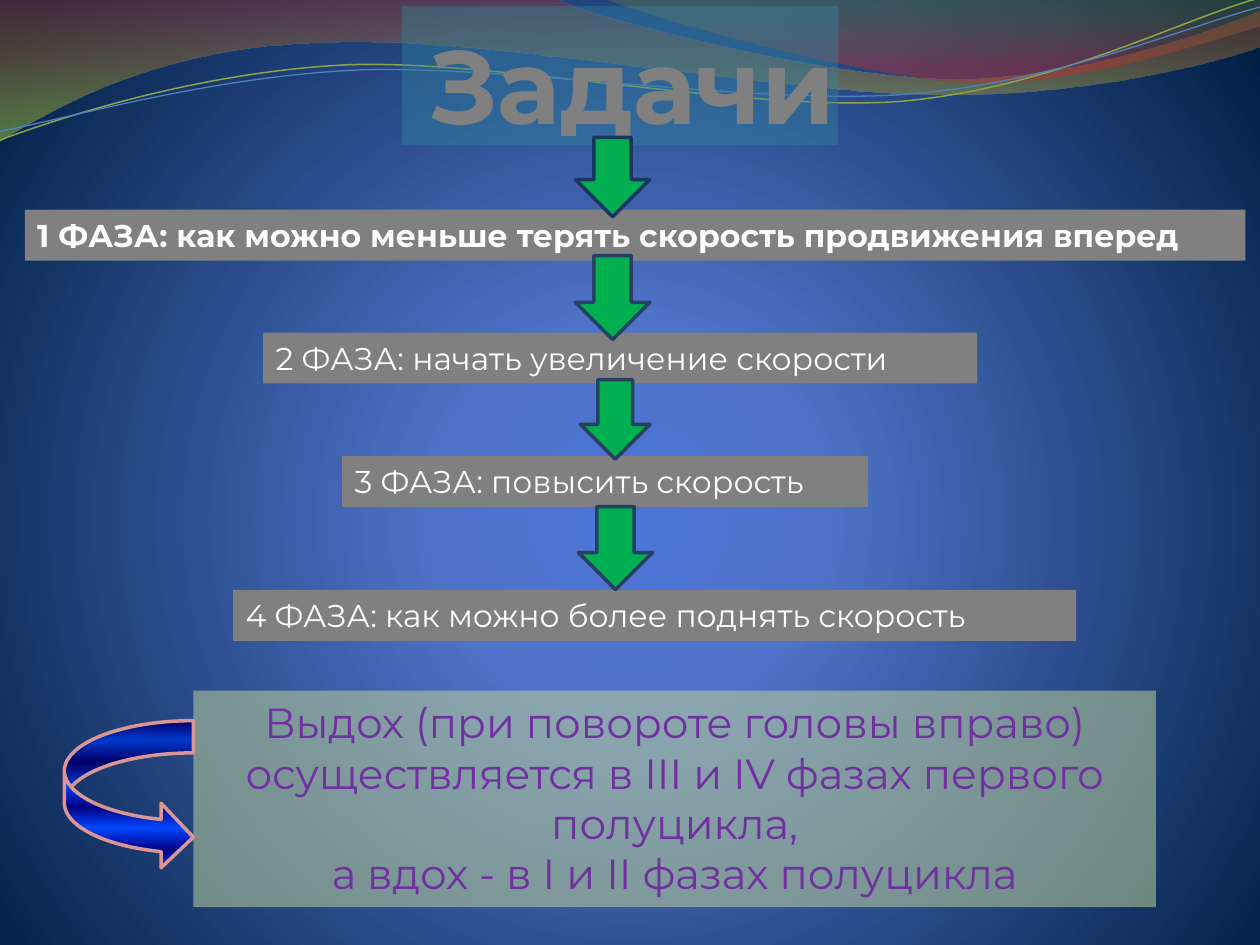
import math

from lxml import etree
from pptx import Presentation
from pptx import util as u
from pptx.dml.color import RGBColor
from pptx.enum import shapes, text
from pptx.oxml.ns import qn

SHAPE = shapes.MSO_SHAPE
FONT = "Montserrat"
NAVY, BLUE = "000082", "0047FF"


def color(value):
    return RGBColor.from_string(value)


def add_alpha(color_element, opacity):
    etree.SubElement(color_element, qn("a:alpha")).set("val", str(opacity * 1000))


def fill_solid(shape, value, opacity=100):
    shape.fill.solid()
    shape.fill.fore_color.rgb = color(value)
    if opacity < 100:
        add_alpha(shape._element.spPr.find(".//" + qn("a:srgbClr")), opacity)


def fill_gradient(fill, owner, stops, center=None):
    """Vertical gradient, or a circular one around the rectangle center."""
    fill.solid()
    solid = owner.find(".//" + qn("a:solidFill"))
    gradient = etree.Element(qn("a:gradFill"), rotWithShape="1")
    stop_list = etree.SubElement(gradient, qn("a:gsLst"))
    for position, value, opacity in stops:
        stop = etree.SubElement(stop_list, qn("a:gs"), pos=str(position * 1000))
        stop_color = etree.SubElement(stop, qn("a:srgbClr"), val=value)
        if opacity < 100:
            add_alpha(stop_color, opacity)
    if center:
        circle = etree.SubElement(gradient, qn("a:path"))
        circle.set("path", "circle")
        rectangle = etree.SubElement(circle, qn("a:fillToRect"))
        for side, percent in zip("ltrb", center):
            rectangle.set(side, str(percent * 1000))
    else:
        etree.SubElement(gradient, qn("a:lin"), ang="5400000", scaled="0")
    solid.getparent().replace(solid, gradient)


def set_line(shape, value=None, width=2):
    if value is None:
        shape.line.fill.background()
        return
    shape.line.color.rgb = color(value)
    shape.line.width = u.Pt(width)


def add_block(slide, kind, box):
    shape = slide.shapes.add_shape(kind, *(u.Pt(length) for length in box))
    shape.shadow.inherit = False
    set_line(shape)
    return shape


def add_text(shape, wording, font, frame_format, align=text.PP_ALIGN.LEFT):
    frame = shape.text_frame
    for name, value in {"word_wrap": True, **frame_format}.items():
        setattr(frame, name, value)
    paragraph = frame.paragraphs[0]
    paragraph.text = wording
    paragraph.alignment = align
    for run in paragraph.runs:
        run.font.color.rgb = color(font["color"])
        for name, value in {"name": FONT, "size": u.Pt(font["size"]),
                            "bold": font.get("bold", False)}.items():
            setattr(run.font, name, value)


def turn(point, degrees, center=(359.3, 41.4)):
    angle = math.radians(degrees)
    x, y = point[0] - center[0], point[1] - center[1]
    return (u.Pt(center[0] + x * math.cos(angle) - y * math.sin(angle)),
            u.Pt(center[1] + x * math.sin(angle) + y * math.cos(angle)))


def add_wave(slide, start, segments, close, tilt=0):
    """Outline of lines (x, y) and Bézier curves (x1, y1, x2, y2, x, y)."""
    runs = [[turn(pair, -tilt) for pair in zip(segment[::2], segment[1::2])]
            for segment in segments]
    builder = slide.shapes.build_freeform(*turn(start, -tilt))
    builder.add_line_segments([points[-1] for points in runs], close=close)
    shape = builder.convert_to_shape()
    shape.shadow.inherit = False
    # Turn the straight steps that have control points into curves
    steps = shape._element.spPr.findall(".//" + qn("a:lnTo"))
    for step, points in zip(steps, runs):
        if len(points) == 3:
            curve = etree.Element(qn("a:cubicBezTo"))
            for x, y in points:
                etree.SubElement(curve, qn("a:pt"), x=str(x - shape.left), y=str(y - shape.top))
            step.getparent().replace(step, curve)
    shape.rotation = tilt
    return shape


def add_waves(slide):
    # Filled bands along the top edge
    bands = [
        ((0, 0), [(317, -1), (343, 12, 478, 45, 546, 45), (614, 45, 690, 19, 720, 6),
                  (721, 26), (708, 32, 626, 55, 537, 54), (448, 54, 275, 20, 185, 24),
                  (93, 26, 33, 60, -1, 81), (0, 0)],
         [(0, "973330", 45), (100, "95C238", 55)]),
        ((345, -1), [(366, 8, 491, 45, 554, 47), (616, 50, 692, 23, 720, 15),
                     (720, 0), (345, -1)],
         [(0, "769537", 30), (80, "BE3330", 45)]),
    ]
    for start, segments, stops in bands:
        band = add_wave(slide, start, segments, True)
        fill_gradient(band.fill, band._element.spPr, stops)
        set_line(band)

    # Thin lines
    threads = [
        ((0, 80), [(35, 67, 114, 41, 199, 37), (284, 34, 427, 64, 513, 58),
                   (600, 51, 675, 11, 719, -1)], "89A54F", 0.85),
        ((0, 75), [(34, 69, 118, 44, 204, 40), (290, 37, 430, 60, 516, 54),
                   (602, 48, 678, 15, 720, 4)], "4F81BD", 0.75),
    ]
    for start, segments, value, width in threads:
        thread = add_wave(slide, start, segments, False, tilt=-2.7)
        thread.fill.background()
        set_line(thread, value, width)


def add_title(slide, box):
    title = add_block(slide, SHAPE.RECTANGLE, box)
    fill_solid(title, "31859C", 40)
    add_text(title, "Задачи", {"size": 59.4, "color": "808080", "bold": True},
             {"vertical_anchor": text.MSO_ANCHOR.BOTTOM, "margin_left": 0, "margin_top": 0,
              "margin_right": u.Pt(1.4), "margin_bottom": 0}, text.PP_ALIGN.RIGHT)


def add_breathing_note(slide, box):
    left, top, width, height = box
    note = add_block(slide, SHAPE.RECTANGLE, box)
    fill_solid(note, "C3D69B", 52)
    add_text(note, "Выдох (при повороте головы вправо)\n"
                   "осуществляется в III и IV фазах первого полуцикла,\n"
                   "а вдох - в I и II фазах полуцикла",
             {"size": 24, "color": "7030A0"},
             {"vertical_anchor": text.MSO_ANCHOR.TOP,
              "auto_size": text.MSO_AUTO_SIZE.SHAPE_TO_FIT_TEXT}, text.PP_ALIGN.CENTER)

    # Curved arrow ending at the note's left side
    arrow = add_block(slide, SHAPE.CURVED_RIGHT_ARROW, (left - 73.7, top + 17.2, 73.7, 85))
    positions = (0, 13, 28, 43, 58, 72, 87, 100)
    fill_gradient(arrow.fill, arrow._element.spPr,
                  [(position, (NAVY, BLUE)[index % 2], 100)
                   for index, position in enumerate(positions)])
    set_line(arrow, "D99694")


def add_phases(slide, height=29.1):
    phases = [
        (14.2, 119.8, 697.5, "как можно меньше терять скорость продвижения вперед"),
        (150.4, 190, 408, "начать увеличение скорости"),
        (195.5, 260.5, 300.5, "повысить скорость"),
        (133.2, 337.1, 481.8, "как можно более поднять скорость"),
    ]
    for number, (left, top, width, task) in enumerate(phases, 1):
        bar = add_block(slide, SHAPE.RECTANGLE, (left, top, width, height))
        fill_solid(bar, "808080")
        add_text(bar, f"{number} ФАЗА: {task}",
                 {"size": 18, "color": "FFFFFF", "bold": number == 1},
                 {"vertical_anchor": text.MSO_ANCHOR.TOP,
                  "auto_size": text.MSO_AUTO_SIZE.SHAPE_TO_FIT_TEXT})

    # Arrows leading into each phase
    arrows = [(328.8, 78.5, 42.5, 45.4, "17375E"), (328.8, 146, 42.5, 48, "254061"),
              (331.7, 217, 39.7, 45.4, "254061"), (330.5, 289.5, 42.5, 47.5, "254061")]
    for *box, outline in arrows:
        arrow = add_block(slide, SHAPE.DOWN_ARROW, box)
        fill_solid(arrow, "00B050")
        set_line(arrow, outline)


def main():
    presentation = Presentation()
    presentation.slide_width, presentation.slide_height = u.Pt(720), u.Pt(540)
    slide = presentation.slides.add_slide(presentation.slide_layouts[6])
    fill_gradient(slide.background.fill, slide.element,
                  [(0, "4D75D6", 100), (25, "4E72C7", 100), (100, "001F44", 100)],
                  center=(10, 110, 10, 100))
    add_waves(slide)
    add_title(slide, (229.7, 3.5, 249.2, 79.3))
    add_breathing_note(slide, (110.5, 394.6, 550, 123.8))
    add_phases(slide)
    presentation.save("out.pptx")


if __name__ == "__main__":
    main()
